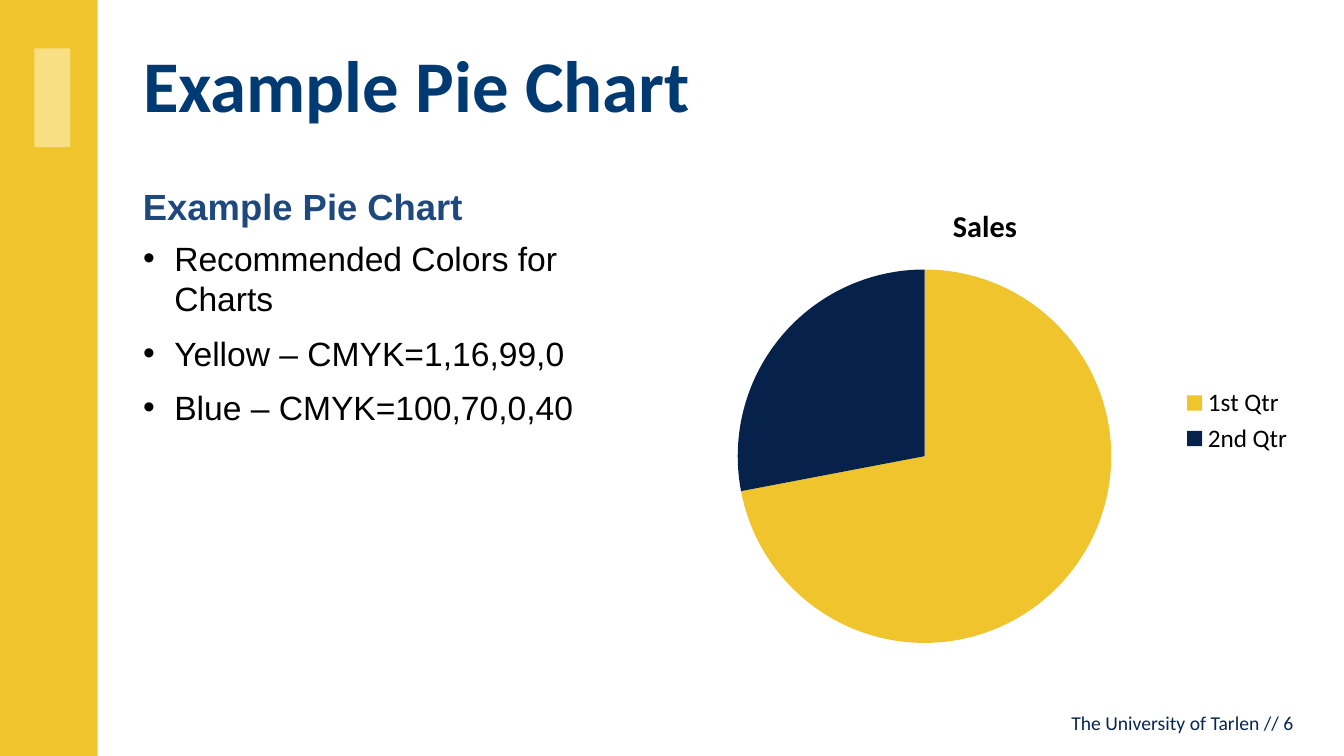
from dataclasses import dataclass

from lxml import etree
from pptx import Presentation
from pptx import util as u
from pptx.chart.data import CategoryChartData
from pptx.dml.color import RGBColor
from pptx.enum import chart as charts, shapes, text
from pptx.oxml import parse_xml
from pptx.oxml.ns import nsdecls, qn


@dataclass(frozen=True)
class Theme:
    yellow: str = "EFC42C"
    pale_yellow: str = "F9DF83"
    navy: str = "07224A"
    footer_navy: str = "082650"
    title_blue: str = "003A72"
    heading_blue: str = "1F497D"
    black: str = "000000"
    title_font: str = "Calibri"
    body_font: str = "Arial"
    title_size: float = 52
    heading_size: float = 26
    body_size: float = 24
    chart_title_size: float = 21.6
    legend_size: float = 18
    footer_size: float = 14


def apply(target, values):
    for name, value in values.items():
        setattr(target, name, value)


class SlideBuilder:
    def __init__(self, page, theme):
        self.page = page
        self.theme = theme

    def style_font(self, font, size, color, name, bold=False):
        apply(font, {"size": u.Pt(size), "name": name, "bold": bold})
        font.color.rgb = RGBColor.from_string(color)

    def block(self, place, color):
        shape = self.page.shapes.add_shape(
            shapes.MSO_SHAPE.RECTANGLE, *map(u.Inches, place))
        shape.shadow.inherit = False
        shape.fill.solid()
        shape.fill.fore_color.rgb = RGBColor.from_string(color)
        shape.line.fill.background()

    def text_box(self, place, lines, style, layout=None, anchor="TOP", bullet=False):
        """Add a text box with one paragraph per line; layout holds paragraph values."""
        box = self.page.shapes.add_textbox(*map(u.Inches, place))
        frame = box.text_frame
        apply(frame, {"word_wrap": True,
                      "vertical_anchor": getattr(text.MSO_ANCHOR, anchor)})
        for index, line in enumerate(lines):
            para = frame.paragraphs[0] if index == 0 else frame.add_paragraph()
            apply(para, layout or {})
            span = para.add_run()
            span.text = line
            self.style_font(span.font, **style)
            if bullet:
                self.add_bullet(para)

    def add_bullet(self, para, indent=0.31):
        properties = para._p.get_or_add_pPr()
        properties.set("marL", str(u.Inches(indent)))
        properties.set("indent", str(u.Inches(-indent)))
        etree.SubElement(properties, qn("a:buFont")).set("typeface", "Arial")
        etree.SubElement(properties, qn("a:buChar")).set("char", "•")

    def pie(self, place, title, shares, colors, plot_area):
        """Add a pie chart; plot_area is x, y, w, h as fractions of the chart."""
        theme = self.theme
        data = CategoryChartData()
        data.categories = list(shares)
        data.add_series(title, list(shares.values()))
        chart = self.page.shapes.add_chart(
            charts.XL_CHART_TYPE.PIE, *map(u.Inches, place), data).chart
        self.style_font(chart.font, theme.legend_size, theme.black, theme.title_font)
        apply(chart, {"has_title": True, "has_legend": True})
        chart.chart_title.text_frame.text = title
        self.style_font(chart.chart_title.text_frame.paragraphs[0].runs[0].font,
                        theme.chart_title_size, theme.black, theme.title_font, True)
        apply(chart.legend, {"position": charts.XL_LEGEND_POSITION.RIGHT,
                             "include_in_layout": False})
        plot = chart.plots[0]
        plot.vary_by_categories = True
        for index, color in enumerate(colors):
            fill = plot.series[0].points[index].format.fill
            fill.solid()
            fill.fore_color.rgb = RGBColor.from_string(color)
        self.place_plot(chart, plot_area)

    def place_plot(self, chart, plot_area):
        area = chart._chartSpace.find(".//" + qn("c:plotArea"))
        for old in area.findall(qn("c:layout")):
            area.remove(old)
        parts = [("layoutTarget", "inner"), ("xMode", "edge"), ("yMode", "edge"),
                 *zip("xywh", plot_area)]
        values = "".join(f'<c:{name} val="{value}"/>' for name, value in parts)
        area.insert(0, parse_xml(
            f'<c:layout {nsdecls("c")}><c:manualLayout>{values}'
            "</c:manualLayout></c:layout>"))


def main():
    deck = Presentation()
    apply(deck, {"slide_width": u.Inches(13.33), "slide_height": u.Inches(7.5)})
    theme = Theme()
    slide = SlideBuilder(deck.slides.add_slide(deck.slide_layouts[6]), theme)

    slide.block((0, 0, 0.97, 7.5), theme.yellow)
    slide.block((0.34, 0.48, 0.36, 0.98), theme.pale_yellow)
    slide.text_box((8.06, 6.97, 4.87, 0.4), ["The University of Tarlen // 6"],
                   {"size": theme.footer_size, "color": theme.footer_navy,
                    "name": theme.title_font},
                   {"alignment": text.PP_ALIGN.RIGHT}, anchor="MIDDLE")

    slide.pie((6.61, 1.83, 6.32, 4.69), "Sales", {"1st Qtr": 72, "2nd Qtr": 28},
              (theme.yellow, theme.navy), (0.11, 0.18, 0.59, 0.79))

    left = 1.32
    slide.text_box((left, 1.78, 4.86, 0.45), ["Example Pie Chart"],
                   {"size": theme.heading_size, "color": theme.heading_blue,
                    "name": theme.body_font, "bold": True})
    slide.text_box((left, 2.31, 4.85, 4.21),
                   ["Recommended Colors for Charts", "Yellow – CMYK=1,16,99,0",
                    "Blue – CMYK=100,70,0,40"],
                   {"size": theme.body_size, "color": theme.black,
                    "name": theme.body_font},
                   {"space_before": u.Pt(10)}, bullet=True)
    slide.text_box((left, 0.38, 11.62, 0.96), ["Example Pie Chart"],
                   {"size": theme.title_size, "color": theme.title_blue,
                    "name": theme.title_font, "bold": True},
                   {"line_spacing": u.Pt(60)})
    deck.save("out.pptx")


if __name__ == "__main__":
    main()
